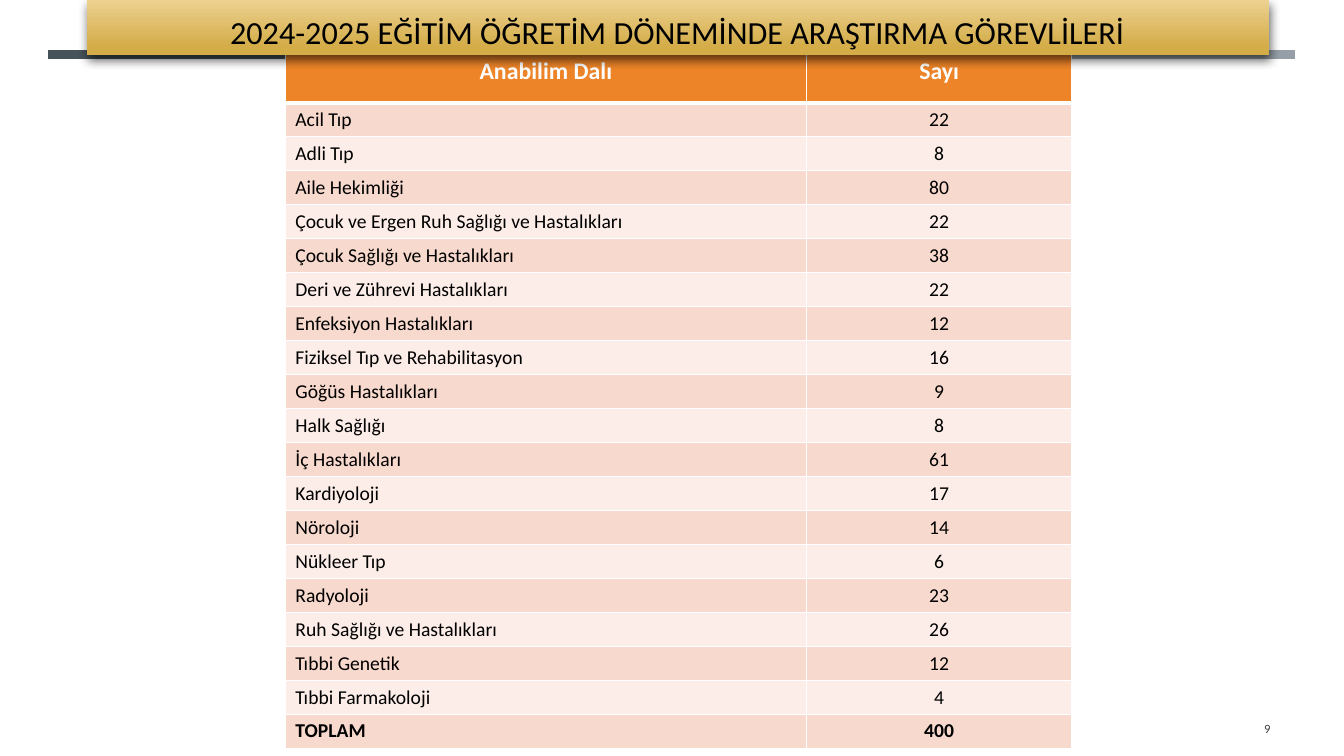
from dataclasses import dataclass

from lxml import etree
from pptx import Presentation
from pptx import util as u
from pptx.dml.color import RGBColor
from pptx.enum import shapes, text
from pptx.oxml import ns


@dataclass(frozen=True)
class Theme:
    font: str = "Calibri"
    black: str = "000000"
    white: str = "FFFFFF"
    gray: str = "404040"
    orange: str = "ED8428"
    bands: tuple = ("F8D9CD", "FCEDE8")
    rules: tuple = ("465359", "ED8428", "969FA7")
    gold: tuple = ((0, "ECD190"), (0.84, "D4AD49"))
    title: int = 23
    head: int = 17
    body: int = 14
    note: int = 9


THEME = Theme()
LEFT, MID, RIGHT = text.PP_ALIGN.LEFT, text.PP_ALIGN.CENTER, text.PP_ALIGN.RIGHT
STAFF = (
    ("Acil Tıp", 22),
    ("Adli Tıp", 8),
    ("Aile Hekimliği", 80),
    ("Çocuk ve Ergen Ruh Sağlığı ve Hastalıkları", 22),
    ("Çocuk Sağlığı ve Hastalıkları", 38),
    ("Deri ve Zührevi Hastalıkları", 22),
    ("Enfeksiyon Hastalıkları", 12),
    ("Fiziksel Tıp ve Rehabilitasyon", 16),
    ("Göğüs Hastalıkları", 9),
    ("Halk Sağlığı", 8),
    ("İç Hastalıkları", 61),
    ("Kardiyoloji", 17),
    ("Nöroloji", 14),
    ("Nükleer Tıp", 6),
    ("Radyoloji", 23),
    ("Ruh Sağlığı ve Hastalıkları", 26),
    ("Tıbbi Genetik", 12),
    ("Tıbbi Farmakoloji", 4),
)


def rgb(code):
    return RGBColor.from_string(code)


def sub(parent, tag, **attrs):
    """Append a DrawingML element to parent."""
    return etree.SubElement(parent, ns.qn(f"a:{tag}"), attrs)


def write(frame, words, size, color, align, bold=False):
    para = frame.paragraphs[0]
    para.text = words
    para.alignment = align
    font = para.font
    font.name, font.size, font.bold = THEME.font, u.Pt(size), bold
    font.color.rgb = rgb(color)


def edge(cell, base=1):
    """Draw white cell borders, with the bottom one base points wide."""
    props = cell._tc.get_or_add_tcPr()
    for i, side in enumerate("LRTB"):
        width = base if side == "B" else 1
        line = sub(props, f"ln{side}", w=str(u.Pt(width)))
        sub(sub(line, "solidFill"), "srgbClr", val=THEME.white)
        props.insert(i, line)


def add_rules(slide, left, top, width, gap=0.11):
    """Draw three equal bars across the given width."""
    span = (width - 2 * gap) / 3
    for i, color in enumerate(THEME.rules):
        x = left + i * (span + gap)
        rule = slide.shapes.add_connector(
            shapes.MSO_CONNECTOR.STRAIGHT,
            u.Inches(x), u.Inches(top), u.Inches(x + span), u.Inches(top))
        rule.line.color.rgb = rgb(color)
        rule.line.width = u.Pt(6.5)
        sub(rule._element.spPr, "effectLst")


def add_staff(slide, left, top, width, height):
    total = sum(count for _, count in STAFF)
    rows = (("Anabilim Dalı", "Sayı"), *STAFF, ("TOPLAM", total))
    table = slide.shapes.add_table(
        len(rows), 2, u.Inches(left), u.Inches(top),
        u.Inches(width), u.Inches(height)).table
    table.columns[0].width = u.Inches(5.17)
    table.columns[1].width = u.Inches(width - 5.17)
    first = 0.62
    step = (height - first) / (len(rows) - 1)
    for i, row in enumerate(rows):
        head = i == 0
        table.rows[i].height = u.Inches(first if head else step)
        for j, value in enumerate(row):
            cell = table.cell(i, j)
            cell.vertical_anchor = text.MSO_ANCHOR.MIDDLE
            cell.fill.solid()
            fill = THEME.orange if head else THEME.bands[(i - 1) % 2]
            cell.fill.fore_color.rgb = rgb(fill)
            write(cell.text_frame, str(value),
                  THEME.head if head else THEME.body,
                  THEME.white if head else THEME.black,
                  MID if head or j else LEFT,
                  bold=head or i == len(rows) - 1)
            edge(cell, 3 if head else 1)


def add_title(slide, left, top, width, height):
    bar = slide.shapes.add_shape(
        shapes.MSO_SHAPE.RECTANGLE, u.Inches(left), u.Inches(top),
        u.Inches(width), u.Inches(height))
    bar.fill.gradient()
    bar.fill.gradient_angle = 270
    for stop, (place, color) in zip(bar.fill.gradient_stops, THEME.gold):
        stop.position = place
        stop.color.rgb = rgb(color)
    bar.line.fill.background()
    bar.shadow.inherit = False
    effects = bar._element.spPr.find(ns.qn("a:effectLst"))
    shade = sub(effects, "outerShdw", blurRad=str(u.Pt(7)), dist=str(u.Pt(3)),
                dir=str(84 * 60000), rotWithShape="0")
    sub(sub(shade, "srgbClr", val=THEME.black), "alpha", val="60000")
    frame = bar.text_frame
    frame.word_wrap = True
    frame.vertical_anchor = text.MSO_ANCHOR.BOTTOM
    write(frame, "2024-2025 EĞİTİM ÖĞRETİM DÖNEMİNDE ARAŞTIRMA GÖREVLİLERİ",
          THEME.title, THEME.black, MID)


def add_number(slide, left, top, width, height):
    box = slide.shapes.add_textbox(
        u.Inches(left), u.Inches(top), u.Inches(width), u.Inches(height))
    frame = box.text_frame
    frame.word_wrap = True
    frame.vertical_anchor = text.MSO_ANCHOR.MIDDLE
    write(frame, "9", THEME.note, THEME.gray, RIGHT)


def main():
    deck = Presentation()
    deck.slide_width, deck.slide_height = u.Inches(13.33), u.Inches(7.5)
    slide = deck.slides.add_slide(deck.slide_layouts[6])
    add_rules(slide, 0.48, 0.54, 12.36)
    add_staff(slide, 2.83, 0.4, 7.8, 6.51)
    add_title(slide, 0.86, 0, 11.73, 0.55)
    add_number(slide, 11.55, 7.03, 1.15, 0.4)
    deck.save("out.pptx")


if __name__ == "__main__":
    main()
